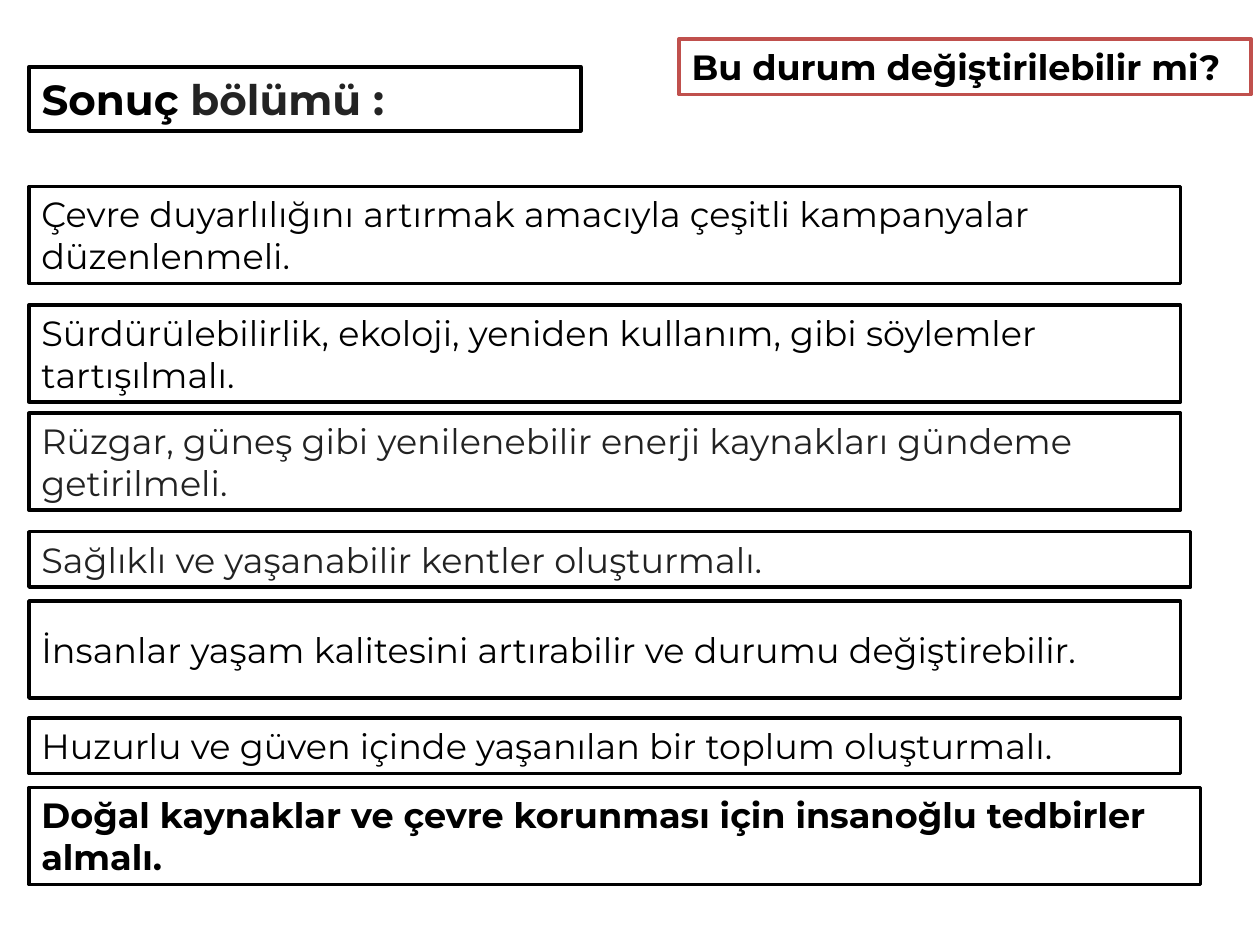
from pptx import Presentation
from pptx.dml.color import RGBColor
from pptx.enum.shapes import MSO_SHAPE
from pptx.enum.text import MSO_ANCHOR, MSO_AUTO_SIZE, PP_ALIGN
from pptx.util import Inches, Pt

FONT = "Montserrat"
BLACK, CHARCOAL, DARK_GRAY = "000000", "222222", "232323"
WHITE, RED = "FFFFFF", "C0504D"
LEFT, WIDTH = 0.23, 9.14
ONE_LINE, TWO_LINES = 0.44, 0.77

PROPOSALS = [
    ("Çevre duyarlılığını artırmak amacıyla çeşitli kampanyalar düzenlenmeli.",
     1.48, WIDTH, TWO_LINES, BLACK, False),
    ("Sürdürülebilirlik, ekoloji, yeniden kullanım, gibi söylemler tartışılmalı.",
     2.42, WIDTH, TWO_LINES, BLACK, False),
    ("Rüzgar, güneş gibi yenilenebilir enerji kaynakları gündeme getirilmeli.",
     3.28, WIDTH, TWO_LINES, CHARCOAL, False),
    ("Sağlıklı ve yaşanabilir kentler oluşturmalı.",
     4.22, 9.22, ONE_LINE, CHARCOAL, False),
    ("İnsanlar yaşam kalitesini artırabilir ve durumu değiştirebilir.",
     4.77, WIDTH, TWO_LINES, BLACK, False),
    ("Huzurlu ve güven içinde yaşanılan bir toplum oluşturmalı.",
     5.7, WIDTH, ONE_LINE, BLACK, False),
    ("Doğal kaynaklar ve çevre korunması için insanoğlu tedbirler almalı.",
     6.25, 9.3, TWO_LINES, BLACK, True),
]


def color(value):
    return RGBColor.from_string(value)


def style_frame(box, outline):
    box.fill.solid()
    box.fill.fore_color.rgb = color(WHITE)
    box.line.color.rgb = color(outline)
    box.line.width = Pt(2)
    frame = box.text_frame
    frame.word_wrap = True
    frame.auto_size = MSO_AUTO_SIZE.NONE
    frame.vertical_anchor = MSO_ANCHOR.MIDDLE


def style_span(span, size, ink, bold):
    span.font.name = FONT
    span.font.size = Pt(size)
    span.font.bold = bold
    span.font.color.rgb = color(ink)


def add_title(page):
    title = page.shapes.title
    title.left, title.top = Inches(LEFT), Inches(0.53)
    title.width, title.height = Inches(4.38), Inches(0.51)
    style_frame(title, BLACK)
    para = title.text_frame.paragraphs[0]
    para.alignment = PP_ALIGN.JUSTIFY
    for text, ink in (("Sonuç ", BLACK), ("bölümü :", DARK_GRAY)):
        span = para.add_run()
        span.text = text
        style_span(span, 24, ink, True)


def add_statement(page, text, left, top, width, height, ink, bold, outline=BLACK):
    box = page.shapes.add_shape(MSO_SHAPE.RECTANGLE, Inches(left), Inches(top),
                                Inches(width), Inches(height))
    box.shadow.inherit = False
    style_frame(box, outline)
    box.text_frame.text = text
    para = box.text_frame.paragraphs[0]
    para.alignment = PP_ALIGN.LEFT
    style_span(para.runs[0], 20, ink, bold)


def main():
    deck = Presentation()
    deck.slide_width, deck.slide_height = Inches(10), Inches(7.5)
    page = deck.slides.add_slide(deck.slide_layouts.get_by_name("Title Only"))
    add_title(page)
    add_statement(page, "Bu durum değiştirilebilir mi?", 5.39, 0.31, 4.54,
                  ONE_LINE, BLACK, True, RED)
    for text, top, width, height, ink, bold in PROPOSALS:
        add_statement(page, text, LEFT, top, width, height, ink, bold)
    deck.save("out.pptx")


if __name__ == "__main__":
    main()
